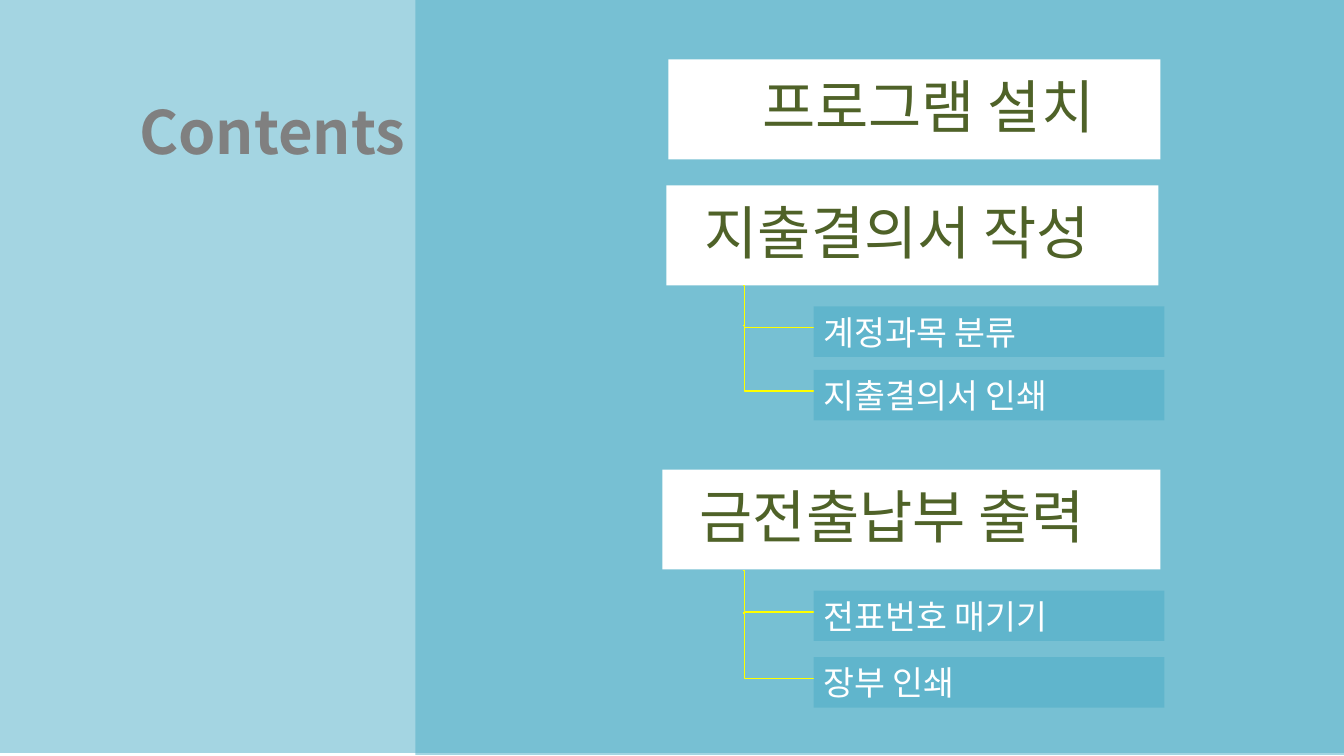
from dataclasses import dataclass

from lxml import etree
from pptx import Presentation
from pptx.dml.color import RGBColor
from pptx.enum.shapes import MSO_CONNECTOR, MSO_SHAPE
from pptx.enum.text import MSO_ANCHOR, PP_ALIGN
from pptx.oxml.ns import qn
from pptx.util import Inches, Pt

RECT = MSO_SHAPE.RECTANGLE
ELBOW = MSO_CONNECTOR.ELBOW
MIDDLE = MSO_ANCHOR.MIDDLE
LEFT, RIGHT = PP_ALIGN.LEFT, PP_ALIGN.RIGHT

FONT = "Noto Sans CJK KR"
TEAL, WHITE, GREEN, GRAY, YELLOW = "4BACC6", "FFFFFF", "4F6228", "808080", "FFFF00"
HEADING_H = 0.99
ITEM_X, ITEM_W, ITEM_H = 8.07, 3.48, 0.5
BRANCH_X = 7.37


@dataclass
class Section:
    title: str
    top: float
    box_x: float
    box_w: float
    text_x: float
    text_w: float


@dataclass
class Item:
    text: str
    top: float
    branch_top: float
    bend: int


SECTIONS = [
    Section("프로그램 설치", 0.59, 6.63, 4.88, 6.53, 4.88),
    Section("지출결의서 작성", 1.84, 6.61, 4.88, 5.96, 5.44),
    Section("금전출납부 출력", 4.66, 6.57, 4.94, 5.91, 5.61),
]
ITEMS = [
    Item("계정과목 분류", 3.04, 2.83, 1700),
    Item("지출결의서 인쇄", 3.67, 3.23, 1800),
    Item("전표번호 매기기", 5.86, 5.66, 1700),
    Item("장부 인쇄", 6.52, 6.08, 1800),
]


def rgb(color: str) -> RGBColor:
    return RGBColor.from_string(color)


def add_rect(shapes, x: float, y: float, w: float, h: float, color: str, alpha: int = 100):
    sp = shapes.add_shape(RECT, Inches(x), Inches(y), Inches(w), Inches(h))
    sp.shadow.inherit = False
    sp.line.fill.background()
    sp.fill.solid()
    sp.fill.fore_color.rgb = rgb(color)
    if alpha < 100:
        clr = sp.fill._xPr.find(qn("a:solidFill"))[0]
        etree.SubElement(clr, qn("a:alpha"), val=str(alpha * 1000))
    return sp


def write(sp, text: str, size: float, color: str, bold: bool = False,
          align=LEFT, spacing: float = 1.0, margins: dict | None = None) -> None:
    tf = sp.text_frame
    frame_format = {"word_wrap": True, "vertical_anchor": MIDDLE, **(margins or {})}
    for name, value in frame_format.items():
        setattr(tf, name, value)
    p = tf.paragraphs[0]
    p.alignment = align
    p.line_spacing = spacing
    r = p.add_run()
    r.text = text
    for name, value in {"name": FONT, "size": Pt(size), "bold": bold}.items():
        setattr(r.font, name, value)
    r.font.color.rgb = rgb(color)
    etree.SubElement(r._r.get_or_add_rPr(), qn("a:ea"), typeface=FONT)


def add_section(s, section: Section) -> None:
    shapes = s.shapes.add_group_shape().shapes
    add_rect(shapes, section.box_x, section.top, section.box_w, HEADING_H, WHITE)
    sp = shapes.add_textbox(Inches(section.text_x), Inches(section.top),
                            Inches(section.text_w), Inches(HEADING_H))
    margins = {f"margin_{side}": Inches(0.17) for side in ("top", "right", "bottom")}
    margins["margin_left"] = Inches(1.03)
    write(sp, section.title, 41.3, GREEN, spacing=0.9, margins=margins)


def add_branch(s, item: Item) -> None:
    cx = s.shapes.add_connector(ELBOW, Inches(BRANCH_X), Inches(item.branch_top),
                                Inches(ITEM_X), Inches(item.top + 0.21))
    cx.line.color.rgb = rgb(YELLOW)
    cx.line.width = Pt(1)
    sp_pr = cx._element.spPr
    etree.SubElement(sp_pr, qn("a:effectLst"))
    guides = sp_pr.find(qn("a:prstGeom")).find(qn("a:avLst"))
    etree.SubElement(guides, qn("a:gd"), name="adj1", fmla=f"val {item.bend}")


def main() -> None:
    prs = Presentation()
    prs.slide_width, prs.slide_height = Inches(13.33), Inches(7.5)
    s = prs.slides.add_slide(prs.slide_layouts[6])

    # Background panels
    add_rect(s.shapes, 0, -0.03, 13.33, 7.5, TEAL, 50)
    add_rect(s.shapes, 4.12, -0.01, 9.21, 7.5, TEAL, 50)

    # Section headings
    for section in SECTIONS:
        add_section(s, section)

    # Slide title
    title = s.shapes.add_textbox(Inches(0.26), Inches(0.89), Inches(3.86), Inches(0.82))
    write(title, "Contents", 42.7, GRAY, bold=True, align=RIGHT)

    # Items and their branches
    for item in ITEMS:
        add_branch(s, item)
        sp = add_rect(s.shapes, ITEM_X, item.top, ITEM_W, ITEM_H, TEAL, 50)
        write(sp, item.text, 24, WHITE)

    prs.save("out.pptx")


if __name__ == "__main__":
    main()
